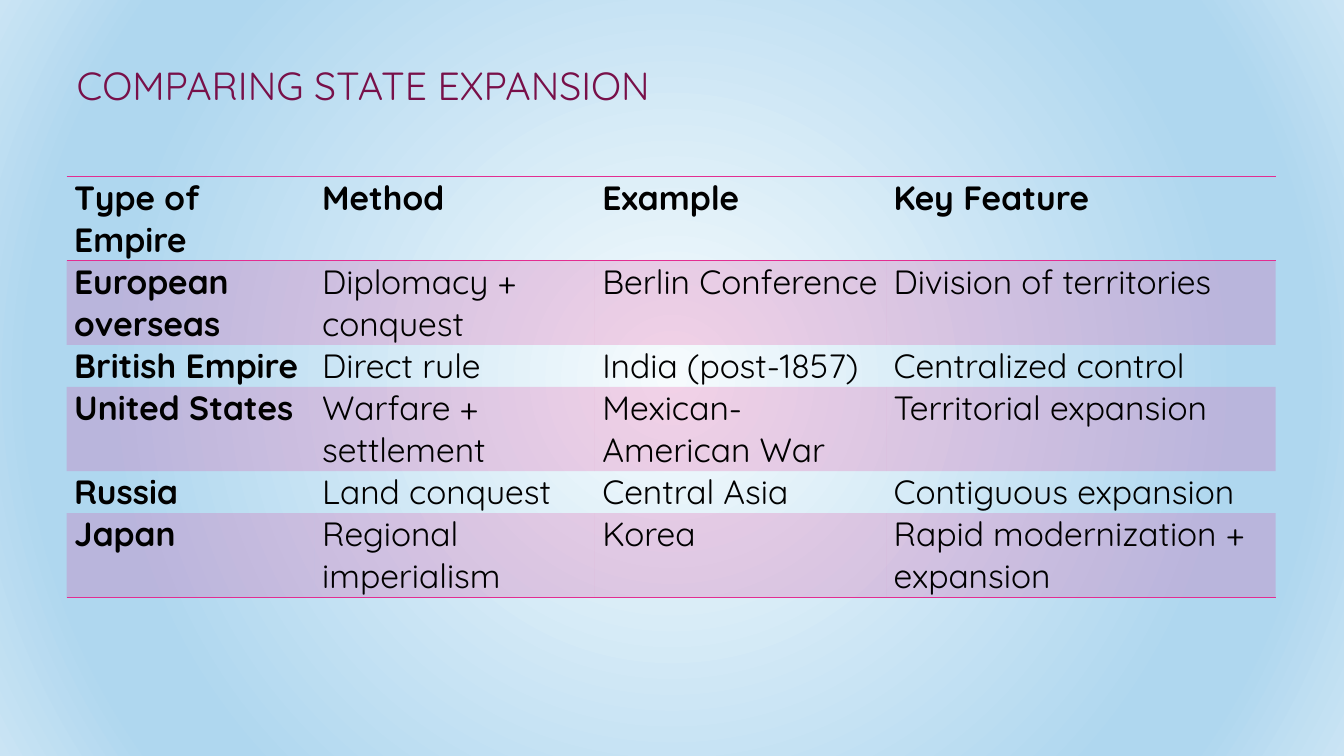
from lxml.etree import SubElement
from pptx import Presentation
from pptx.dml.color import RGBColor
from pptx.enum.text import MSO_ANCHOR, MSO_AUTO_SIZE, PP_ALIGN
from pptx.oxml import parse_xml
from pptx.oxml.ns import nsdecls, qn
from pptx.util import Cm, Pt

COLORS = {
    "title": "781049",
    "text": "000000",
    "accent": "E32D91",
    "center": "F6FBFD",
    "ring": "AFD7EF",
    "edge": "CAE4F4",
}
BACKGROUND_STOPS = [(0, "center"), (74, "ring"), (83, "ring"), (100, "edge")]
FONT_NAME = "Quicksand"
TITLE_FONT = {"name": FONT_NAME, "size": Pt(28), "bold": False}
TABLE_FONT = {"name": FONT_NAME, "size": Pt(24)}
CELL_FORMAT = {
    "margin_left": Cm(0.19),
    "margin_right": Cm(0.19),
    "margin_top": Cm(0),
    "margin_bottom": Cm(0),
    "vertical_anchor": MSO_ANCHOR.TOP,
}
NO_STYLE = "{2D5ABB26-0587-4C30-8999-92F81FD0307C}"
LINE_HEIGHT = 1.06
COLUMN_WIDTHS = [6.25, 7.06, 7.34, 9.82]

# Lines of text in the row, followed by its cells
EMPIRES = [
    (2, ["Type of Empire", "Method", "Example", "Key Feature"]),
    (2, ["European overseas", "Diplomacy + conquest", "Berlin Conference",
         "Division of territories"]),
    (1, ["British Empire", "Direct rule", "India (post-1857)", "Centralized control"]),
    (2, ["United States", "Warfare + settlement", "Mexican-American War",
         "Territorial expansion"]),
    (1, ["Russia", "Land conquest", "Central Asia", "Contiguous expansion"]),
    (2, ["Japan", "Regional imperialism", "Korea", "Rapid modernization + expansion"]),
]


def apply_format(target, values):
    for name, value in values.items():
        setattr(target, name, value)


def format_font(font, values, color):
    apply_format(font, values)
    font.color.rgb = RGBColor.from_string(COLORS[color])


def set_background(slide):
    """Fill the slide with a gradient that spreads from its center."""
    fill = slide.background.fill
    fill.gradient()
    stops = "".join(
        f'<a:gs pos="{position * 1000}"><a:srgbClr val="{COLORS[color]}"/></a:gs>'
        for position, color in BACKGROUND_STOPS
    )
    gradient = parse_xml(
        f'<a:gradFill {nsdecls("a")} rotWithShape="1"><a:gsLst>{stops}</a:gsLst>'
        '<a:path path="circle">'
        '<a:fillToRect l="50000" t="50000" r="50000" b="50000"/>'
        "</a:path></a:gradFill>"
    )
    previous = slide.element.find(".//" + qn("a:gradFill"))
    previous.getparent().replace(previous, gradient)


def set_title(slide, text):
    title = slide.shapes.title
    apply_format(title, {"left": Cm(1.68), "top": Cm(0.64),
                         "width": Cm(29.64), "height": Cm(2.24)})
    frame = title.text_frame
    frame.text = text
    apply_format(frame, {"vertical_anchor": MSO_ANCHOR.BOTTOM, "word_wrap": True,
                         "auto_size": MSO_AUTO_SIZE.NONE})
    paragraph = frame.paragraphs[0]
    apply_format(paragraph, {"alignment": PP_ALIGN.LEFT, "line_spacing": 0.9})
    format_font(paragraph.font, TITLE_FONT, "title")


def shade_cell(cell):
    cell.fill.solid()
    cell.fill.fore_color.rgb = RGBColor.from_string(COLORS["accent"])
    color = cell.fill._xPr.find(".//" + qn("a:srgbClr"))
    SubElement(color, qn("a:alpha"), val="20000")


def add_borders(cell, sides):
    """Draw the given sides, in the order top, bottom."""
    properties = cell._tc.get_or_add_tcPr()
    for index, side in enumerate(sides):
        properties.insert(index, parse_xml(
            f'<a:ln{side} {nsdecls("a")} w="12700"><a:solidFill>'
            f'<a:srgbClr val="{COLORS["accent"]}"/></a:solidFill></a:ln{side}>'
        ))


def fill_cell(cell, text, bold):
    cell.text = text
    apply_format(cell, CELL_FORMAT)
    format_font(cell.text_frame.paragraphs[0].runs[0].font,
                {**TABLE_FONT, "bold": bold}, "text")


def add_empire_table(slide):
    height = LINE_HEIGHT * sum(lines for lines, _ in EMPIRES)
    table = slide.shapes.add_table(
        len(EMPIRES), len(COLUMN_WIDTHS),
        Cm(1.68), Cm(4.45), Cm(sum(COLUMN_WIDTHS)), Cm(height),
    ).table
    apply_format(table, {"first_row": False, "horz_banding": False})
    table._tbl.tblPr.find(qn("a:tableStyleId")).text = NO_STYLE
    for column, width in zip(table.columns, COLUMN_WIDTHS):
        column.width = Cm(width)

    borders = {0: "TB", len(EMPIRES) - 1: "B"}
    for row, (lines, texts) in enumerate(EMPIRES):
        table.rows[row].height = Cm(LINE_HEIGHT * lines)
        for column, text in enumerate(texts):
            cell = table.cell(row, column)
            fill_cell(cell, text, bold=row == 0 or column == 0)
            if row % 2:
                shade_cell(cell)
            else:
                cell.fill.background()
            add_borders(cell, borders.get(row, ""))


def main():
    presentation = Presentation()
    apply_format(presentation, {"slide_width": Cm(33.87), "slide_height": Cm(19.05)})
    slide = presentation.slides.add_slide(presentation.slide_layouts[5])
    set_background(slide)
    set_title(slide, "COMPARING STATE EXPANSION")
    add_empire_table(slide)
    presentation.save("out.pptx")


if __name__ == "__main__":
    main()
